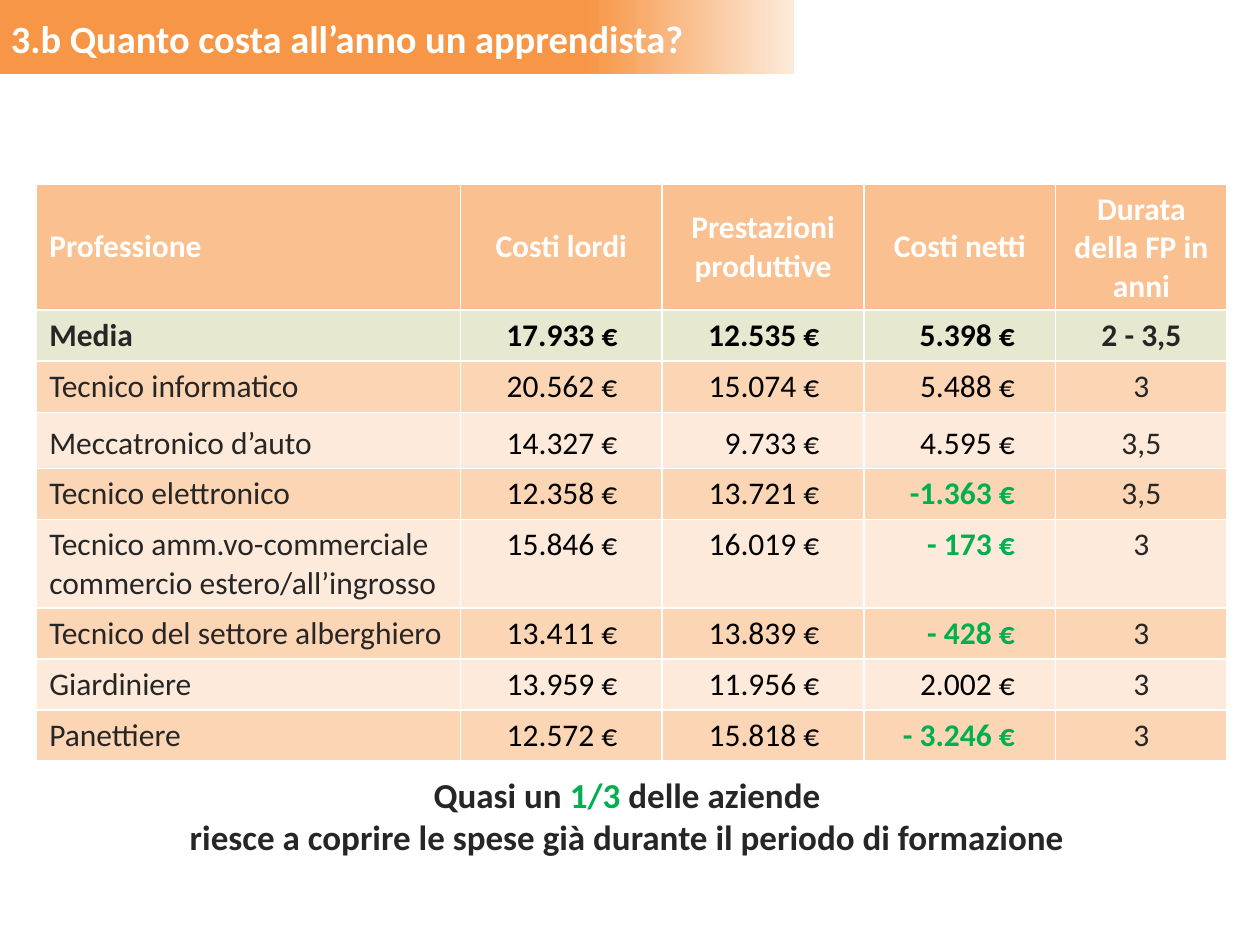
from pptx import Presentation
from pptx.dml.color import RGBColor
from pptx.enum.shapes import MSO_SHAPE
from pptx.enum.text import MSO_ANCHOR, MSO_AUTO_SIZE, PP_ALIGN
from pptx.util import Cm, Pt

FONT = "Calibri"
COLORS = {
    "orange": "F79646",
    "header": "FAC090",
    "average": "E7E8D0",
    "dark_band": "FCD5B5",
    "light_band": "FDEADA",
    "text": "262626",
    "amount": "000000",
    "gain": "00B050",
    "white": "FFFFFF",
}

HEADINGS = ["Professione", "Costi lordi", "Prestazioni produttive",
            "Costi netti", "Durata della FP in anni"]
COSTS = [
    ("Media", "17.933 €", "12.535 €", "5.398 €", "2 - 3,5"),
    ("Tecnico informatico", "20.562 €", "15.074 €", "5.488 €", "3"),
    ("Meccatronico d’auto", "14.327 €", "9.733 €", "4.595 €", "3,5"),
    ("Tecnico elettronico", "12.358 €", "13.721 €", "-1.363 €", "3,5"),
    ("Tecnico amm.vo-commerciale commercio estero/all’ingrosso",
     "15.846 €", "16.019 €", "- 173 €", "3"),
    ("Tecnico del settore alberghiero", "13.411 €", "13.839 €", "- 428 €", "3"),
    ("Giardiniere", "13.959 €", "11.956 €", "2.002 €", "3"),
    ("Panettiere", "12.572 €", "15.818 €", "- 3.246 €", "3"),
]
COLUMN_WIDTHS = [8.54, 4.07, 4.07, 3.86, 3.46]
ROW_HEIGHTS = [2.54, 1.03, 1.03, 1.13, 1.03, 1.78, 1.03, 1.03, 1.03]
AMOUNT_MARGINS = {1: 0.9, 2: 0.9, 3: 0.82}
SPACED_ROW = 3


def rgb(name):
    return RGBColor.from_string(COLORS[name])


def style_font(font, size, color, bold):
    font.name = FONT
    font.size = Pt(size)
    font.bold = bold
    font.color.rgb = rgb(color)


def add_banner(slide):
    banner = slide.shapes.add_shape(MSO_SHAPE.RECTANGLE, 0, 0, Cm(16), Cm(1.5))
    banner.shadow.inherit = False
    banner.line.fill.background()
    banner.fill.gradient()
    banner.fill.gradient_angle = 0
    stops = [(0.74, "orange"), (1, "light_band")]
    for stop, (position, color) in zip(banner.fill.gradient_stops, stops):
        stop.position = position
        stop.color.rgb = rgb(color)


def add_text(slide, left, top, width, height, lines, size, color, align):
    """Add bold lines, each a list of (text, colour override or None)."""
    box = slide.shapes.add_textbox(Cm(left), Cm(top), Cm(width), Cm(height))
    frame = box.text_frame
    frame.word_wrap = True
    frame.auto_size = MSO_AUTO_SIZE.SHAPE_TO_FIT_TEXT
    for index, line in enumerate(lines):
        paragraph = frame.add_paragraph() if index else frame.paragraphs[0]
        paragraph.alignment = align
        style_font(paragraph.font, size, color, True)
        for text, accent in line:
            run = paragraph.add_run()
            run.text = text
            if accent:
                style_font(run.font, size, accent, True)


def fill_cell(cell, text, fill, color, bold, align):
    cell.fill.solid()
    cell.fill.fore_color.rgb = rgb(fill)
    cell.text = text
    paragraph = cell.text_frame.paragraphs[0]
    paragraph.alignment = align
    style_font(paragraph.font, 18, color, bold)
    return paragraph


def add_cost_row(table, row, values):
    if row == 1:
        fill = "average"
    else:
        fill = "light_band" if row % 2 else "dark_band"
    for column, value in enumerate(values):
        cell = table.cell(row, column)
        gain = value.startswith("-")
        color, align = "text", PP_ALIGN.CENTER if column else PP_ALIGN.LEFT
        if column in AMOUNT_MARGINS:
            color, align = "gain" if gain else "amount", PP_ALIGN.RIGHT
            cell.margin_right = Cm(AMOUNT_MARGINS[column])
        paragraph = fill_cell(cell, value, fill, color, row == 1 or gain, align)
        if row == SPACED_ROW:
            paragraph.line_spacing = 1.15
            paragraph.space_after = Pt(10)


def add_cost_table(slide):
    table = slide.shapes.add_table(
        len(ROW_HEIGHTS), len(COLUMN_WIDTHS), Cm(0.74), Cm(3.71),
        Cm(sum(COLUMN_WIDTHS)), Cm(sum(ROW_HEIGHTS))).table
    table.horz_banding = False
    for column, width in zip(table.columns, COLUMN_WIDTHS):
        column.width = Cm(width)
    for row, height in zip(table.rows, ROW_HEIGHTS):
        row.height = Cm(height)
    for column, heading in enumerate(HEADINGS):
        cell = table.cell(0, column)
        cell.vertical_anchor = MSO_ANCHOR.MIDDLE
        align = PP_ALIGN.CENTER if column else PP_ALIGN.LEFT
        fill_cell(cell, heading, "header", "white", True, align)
    for row, values in enumerate(COSTS, start=1):
        add_cost_row(table, row, values)


def main():
    presentation = Presentation()
    presentation.slide_width = Cm(25.4)
    presentation.slide_height = Cm(19.05)
    slide = presentation.slides.add_slide(presentation.slide_layouts[6])

    add_banner(slide)
    add_text(slide, -0.03, 0.18, 16.03, 1.2,
             [[("3.b Quanto costa all’anno un apprendista?", None)]],
             22, "white", PP_ALIGN.LEFT)
    add_text(slide, 0.64, 15.47, 24, 1.96,
             [[("Quasi un ", None), ("1/3 ", "gain"), ("delle aziende", None)],
              [("riesce a coprire le spese già durante il periodo di formazione",
                None)]],
             20, "text", PP_ALIGN.CENTER)
    add_cost_table(slide)
    presentation.save("out.pptx")


if __name__ == "__main__":
    main()
